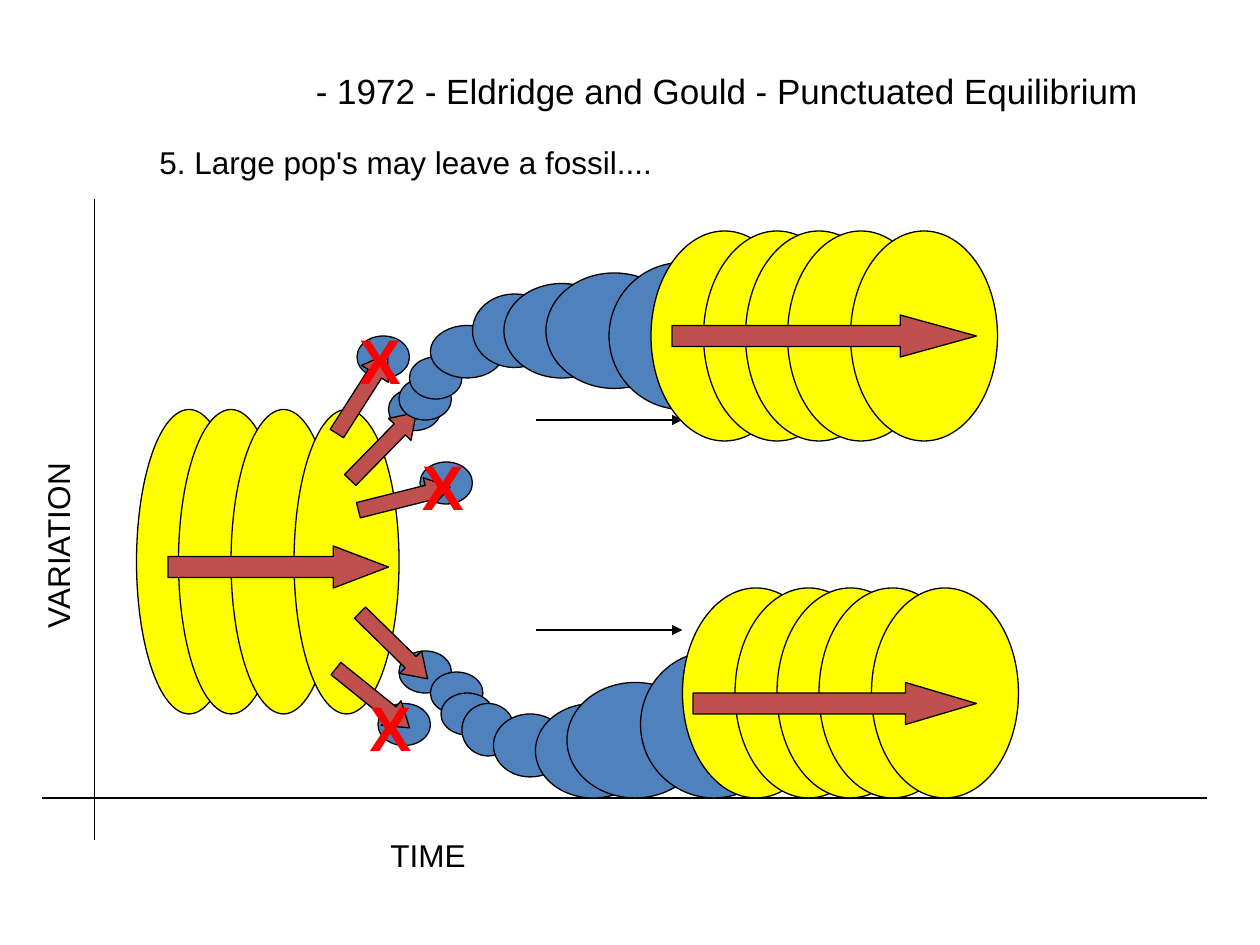
from dataclasses import dataclass

from lxml import etree
from pptx import Presentation
from pptx.dml.color import RGBColor
from pptx.enum.shapes import MSO_CONNECTOR, MSO_SHAPE
from pptx.enum.text import MSO_AUTO_SIZE
from pptx.oxml.ns import qn
from pptx.util import Cm, Pt

ELLIPSE = MSO_SHAPE.OVAL
RIGHT_ARROW = MSO_SHAPE.RIGHT_ARROW
STRAIGHT = MSO_CONNECTOR.STRAIGHT
FIT_SHAPE = MSO_AUTO_SIZE.SHAPE_TO_FIT_TEXT

STEP = 2.54 / 12
BLACK, RED = "000000", "FF0000"
YELLOW, BLUE, BRICK = "FFFF00", "4F81BD", "C0504D"
OUTLINE_WIDTH = Pt(0.75)


@dataclass(frozen=True)
class Population:
    left: float
    top: float
    width: float = 5
    height: float = 4
    color: str = BLUE


@dataclass(frozen=True)
class Trend:
    left: float
    top: float
    width: float = 9
    height: float = 3
    rotation: float = 0


@dataclass(frozen=True)
class Line:
    start: tuple[float, float]
    end: tuple[float, float]
    arrowhead: bool = False


@dataclass(frozen=True)
class Label:
    text: str
    left: float
    top: float
    width: float
    height: float = 4.8
    size: int = 18
    color: str = BLACK
    bold: bool = False
    rotation: float = 0
    indent: float = 0


def grid(*steps: float) -> list[Cm]:
    return [Cm(step * STEP) for step in steps]


def paint(color_format, color: str) -> None:
    color_format.rgb = RGBColor.from_string(color)


def outline(line) -> None:
    paint(line.color, BLACK)
    line.width = OUTLINE_WIDTH


def draw_solid(slide, preset, part, color: str):
    solid = slide.shapes.add_shape(
        preset, *grid(part.left, part.top, part.width, part.height))
    solid.shadow.inherit = False
    solid.fill.solid()
    paint(solid.fill.fore_color, color)
    outline(solid.line)
    return solid


def draw_populations(slide, populations: list[Population]) -> None:
    for population in populations:
        draw_solid(slide, ELLIPSE, population, population.color)


def draw_trend(slide, trend: Trend) -> None:
    arrow = draw_solid(slide, RIGHT_ARROW, trend, BRICK)
    arrow.adjustments[0] = 0.5
    arrow.adjustments[1] = trend.width / trend.height / 4
    arrow.rotation = trend.rotation


def draw_line(slide, line: Line) -> None:
    connector = slide.shapes.add_connector(
        STRAIGHT, *grid(*line.start, *line.end))
    outline(connector.line)
    properties = connector._element.spPr
    if line.arrowhead:
        stroke = properties.find(qn("a:ln"))
        etree.SubElement(stroke, qn("a:tailEnd"), type="triangle")
    etree.SubElement(properties, qn("a:effectLst"))


def draw_label(slide, label: Label) -> None:
    box = slide.shapes.add_textbox(
        *grid(label.left, label.top, label.width, label.height))
    box.rotation = label.rotation
    frame = box.text_frame
    frame.word_wrap = True
    frame.auto_size = FIT_SHAPE
    paragraph = frame.paragraphs[0]
    if label.indent:
        indent, = grid(label.indent)
        paragraph._p.get_or_add_pPr().set("marL", str(int(indent)))
    run = paragraph.add_run()
    run.text = label.text
    font_format = {"name": "Arial", "size": Pt(label.size), "bold": label.bold}
    for attribute, value in font_format.items():
        setattr(run.font, attribute, value)
    paint(run.font.color, label.color)


def large_populations(lefts: list[float], top: float, width: float,
                      height: float) -> list[Population]:
    return [Population(left, top, width, height, YELLOW) for left in lefts]


ANCESTORS = large_populations([13, 17, 22, 28], 39, 10, 29)
UPPER_SPECIES = large_populations([62, 67, 71, 75, 81], 22, 14, 20)
LOWER_SPECIES = large_populations([65, 70, 74, 78, 83], 56, 14, 20)

ISOLATES = [Population(*corner) for corner in
            [(40, 44), (34, 32), (37, 37), (36, 67), (38, 62)]]
UPPER_BRANCH = [Population(*place) for place in [
    (38, 36), (39, 34), (41, 31, 7, 5), (45, 28, 8, 7),
    (48, 27, 11, 9), (52, 26, 13, 11), (58, 25, 14, 14)]]
LOWER_BRANCH = [Population(*place) for place in [
    (41, 64), (42, 66), (44, 67, 5, 5), (47, 68, 7, 6),
    (51, 67, 11, 9), (54, 65, 13, 11), (61, 62, 14, 14)]]

ANCESTRAL_TREND = Trend(16, 52, 21, 4)
UPPER_TREND = Trend(64, 30, 29, 4)
LOWER_TREND = Trend(66, 65, 27, 4)
DEPARTURES = [Trend(left, top, rotation=angle) for left, top, angle in [
    (30, 36, 302.5), (32, 41, 314.4), (33, 60, 44.4),
    (31, 65, 38.9), (34, 46, 345.9)]]

AXES = [Line((9, 19), (9, 80)), Line((4, 76), (115, 76))]
TIME_ARROWS = [Line((51, level), (65, level), True) for level in (40, 60)]

CAPTIONS = [
    Label("- 1972 - Eldridge and Gould - Punctuated Equilibrium",
          4, 6, 113, 5.2, size=20, indent=24.9),
    Label("5. Large pop's may leave a fossil....", 14, 13, 92),
    Label("TIME", 36, 79, 50),
    Label("VARIATION", -23, 30.1, 57, rotation=270),
]
EXTINCTIONS = [Label("X", left, top, 10, 8.4, size=36, color=RED, bold=True)
               for left, top in [(33, 30), (39, 42), (34, 65)]]


def main() -> None:
    presentation = Presentation()
    presentation.slide_width, presentation.slide_height = grid(120, 90)
    slide = presentation.slides.add_slide(presentation.slide_layouts[6])

    for line in AXES:
        draw_line(slide, line)
    for caption in CAPTIONS:
        draw_label(slide, caption)
    draw_populations(slide, ANCESTORS)
    draw_trend(slide, ANCESTRAL_TREND)
    draw_populations(slide, ISOLATES)
    for departure in DEPARTURES:
        draw_trend(slide, departure)
    for extinction in EXTINCTIONS:
        draw_label(slide, extinction)
    draw_populations(slide, UPPER_BRANCH + LOWER_BRANCH)
    for arrow in TIME_ARROWS:
        draw_line(slide, arrow)
    draw_populations(slide, UPPER_SPECIES)
    draw_trend(slide, UPPER_TREND)
    draw_populations(slide, LOWER_SPECIES)
    draw_trend(slide, LOWER_TREND)

    presentation.save("out.pptx")


if __name__ == "__main__":
    main()
